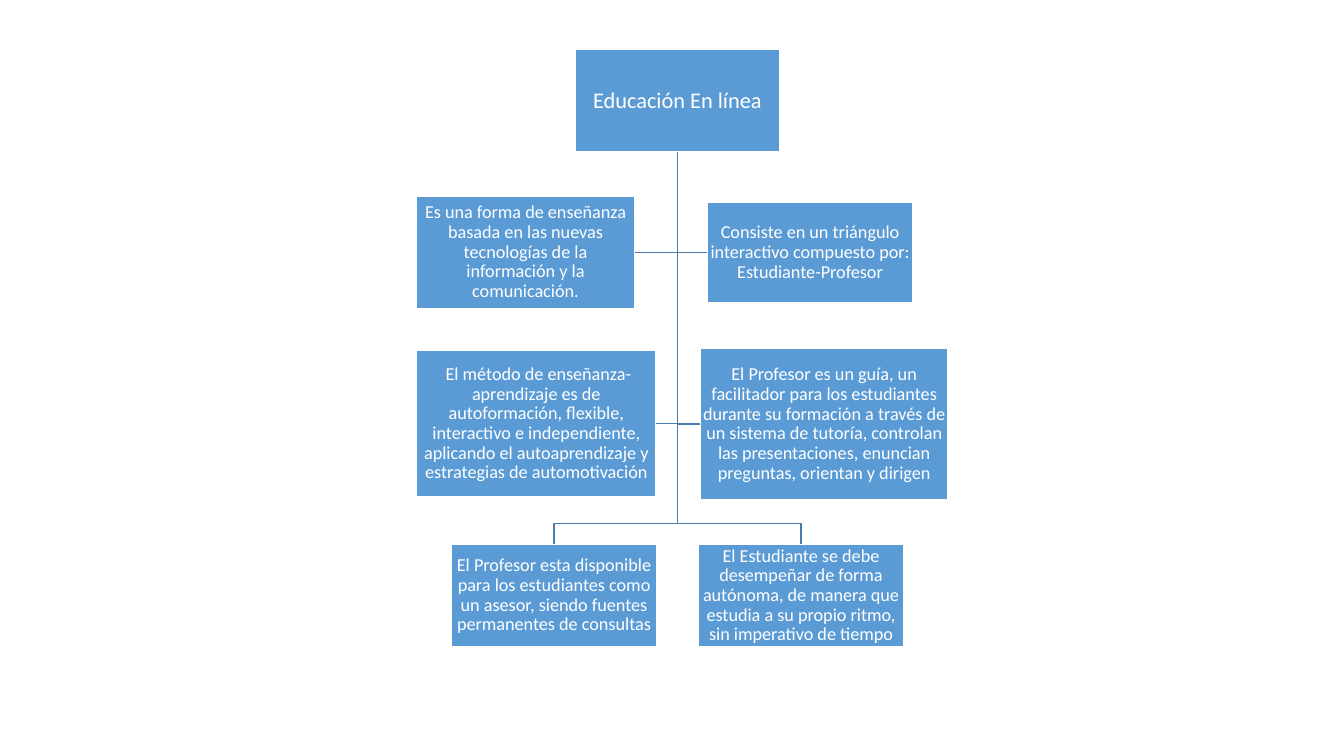
from pptx import Presentation
from pptx import util as u
from pptx.dml.color import RGBColor
from pptx.enum import shapes, text

Pt = u.Pt
BLUE = RGBColor(0x5B, 0x9B, 0xD5)
STEEL = RGBColor(0x49, 0x7C, 0xAB)
WHITE = RGBColor(0xFF, 0xFF, 0xFF)

deck = Presentation()
deck.slide_width, deck.slide_height = Pt(960), Pt(540)
slide = deck.slides.add_slide(deck.slide_layouts[6])

# Box size shared by most nodes, trunk position, height of the last fork
WIDE, HIGH = 146.2, 72.8
TRUNK, TOP, FORK = 483.9, 108.5, 373.9


def draw_box(words, left, top, wide, high, size):
    box = slide.shapes.add_shape(
        shapes.MSO_SHAPE.RECTANGLE, Pt(left), Pt(top), Pt(wide), Pt(high))
    box.shadow.inherit = False
    box.fill.solid()
    box.fill.fore_color.rgb = BLUE
    box.line.color.rgb = WHITE
    box.line.width = Pt(1)
    frame = box.text_frame
    frame.word_wrap = True
    frame.vertical_anchor = text.MSO_ANCHOR.MIDDLE
    for side in ("left", "right", "top", "bottom"):
        setattr(frame, "margin_" + side, Pt(0.7))
    para = frame.paragraphs[0]
    para.alignment = text.PP_ALIGN.CENTER
    para.line_spacing = 0.9
    run = para.add_run()
    run.text = words
    look = {"name": "Calibri", "size": Pt(size)}
    for key, value in look.items():
        setattr(run.font, key, value)
    run.font.color.rgb = WHITE


def draw_branch(*points):
    spots = [(Pt(x), Pt(y)) for x, y in points]
    pen = slide.shapes.build_freeform(*spots[0])
    pen.add_line_segments(spots[1:], close=False)
    branch = pen.convert_to_shape()
    branch.shadow.inherit = False
    branch.fill.background()
    branch.line.color.rgb = STEEL
    branch.line.width = Pt(1)


# Nodes beside the trunk: words, left, top, width, height
sides = [
    ("Es una forma de enseñanza basada en las nuevas tecnologías de la "
     "información y la comunicación.", 297.6, 139.9, 155.5, 80.6),
    ("Consiste en un triángulo interactivo compuesto por: "
     "Estudiante-Profesor", 505.5, 144.5, WIDE, HIGH - 0.8),
    (" El método de enseñanza-aprendizaje es de autoformación, flexible, "
     "interactivo e independiente, aplicando el autoaprendizaje y "
     "estrategias de automotivación", 297.6, 250.4, 170.8, 104.4),
    ("El Profesor es un guía, un facilitador para los estudiantes durante "
     "su formación a través de un sistema de tutoría, controlan las "
     "presentaciones, enuncian preguntas, orientan y dirigen",
     500.4, 249, 176.4, 108),
]

# Nodes under the fork: words, left
leaves = [
    ("El Profesor esta disponible para los estudiantes como un asesor, "
     "siendo fuentes permanentes de consultas", 322.6),
    ("El Estudiante se debe desempeñar de forma autónoma, de manera que "
     "estudia a su propio ritmo, sin imperativo de tiempo", 499),
]
LOW = 389

# Branches, behind the boxes
for words, left, top, wide, high in sides:
    mid = top + high / 2
    edge = left if left > TRUNK else left + wide
    draw_branch((TRUNK, TOP), (TRUNK, mid), (edge, mid))
for words, left in leaves:
    mid = left + WIDE / 2
    draw_branch((TRUNK, TOP), (TRUNK, FORK), (mid, FORK), (mid, LOW))

# Boxes
draw_box("Educación En línea", TRUNK - WIDE / 2, 35.6, WIDE, HIGH, 16)
for node in sides:
    draw_box(*node, 13)
for words, left in leaves:
    draw_box(words, left, LOW, WIDE, HIGH, 13)

deck.save("out.pptx")
